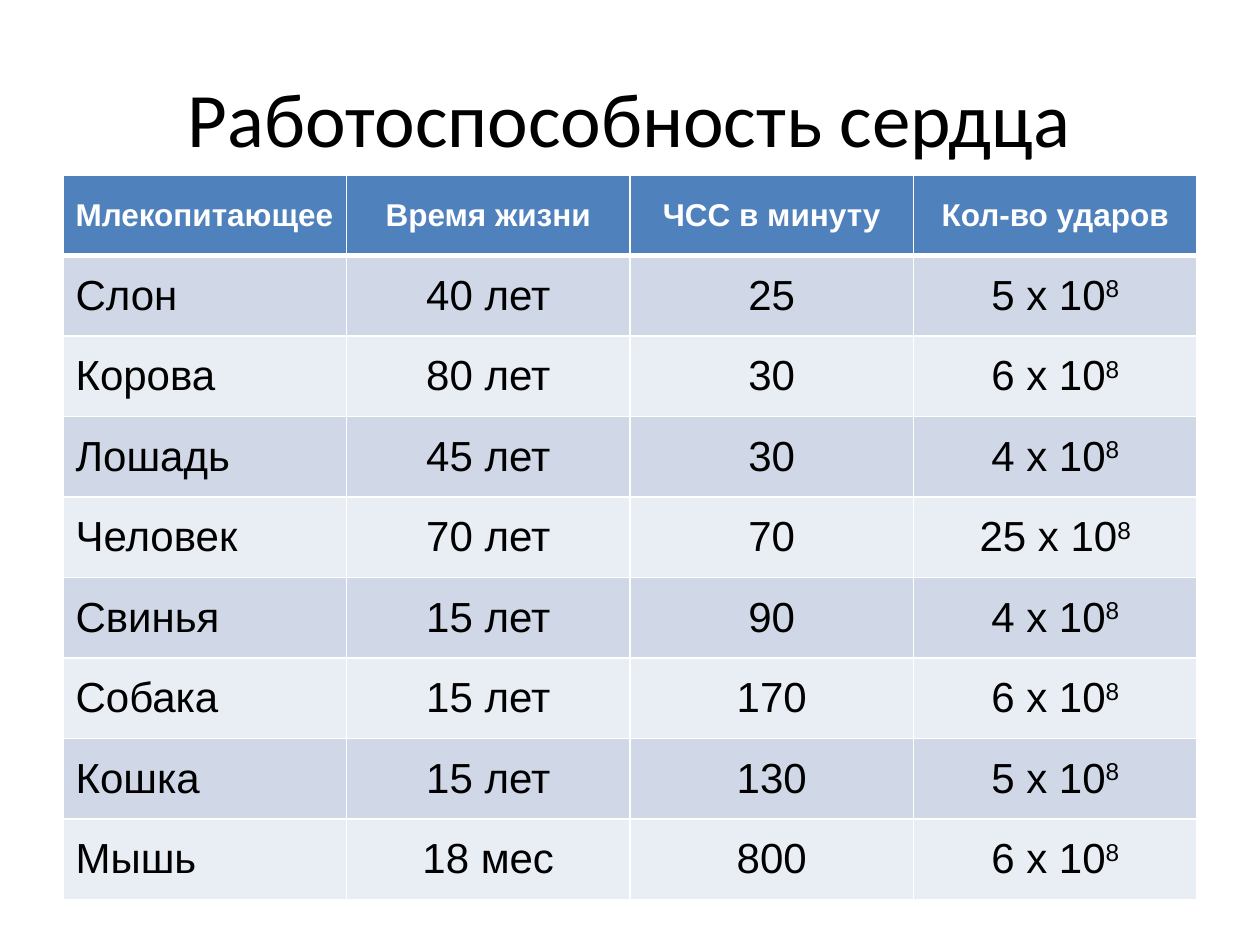
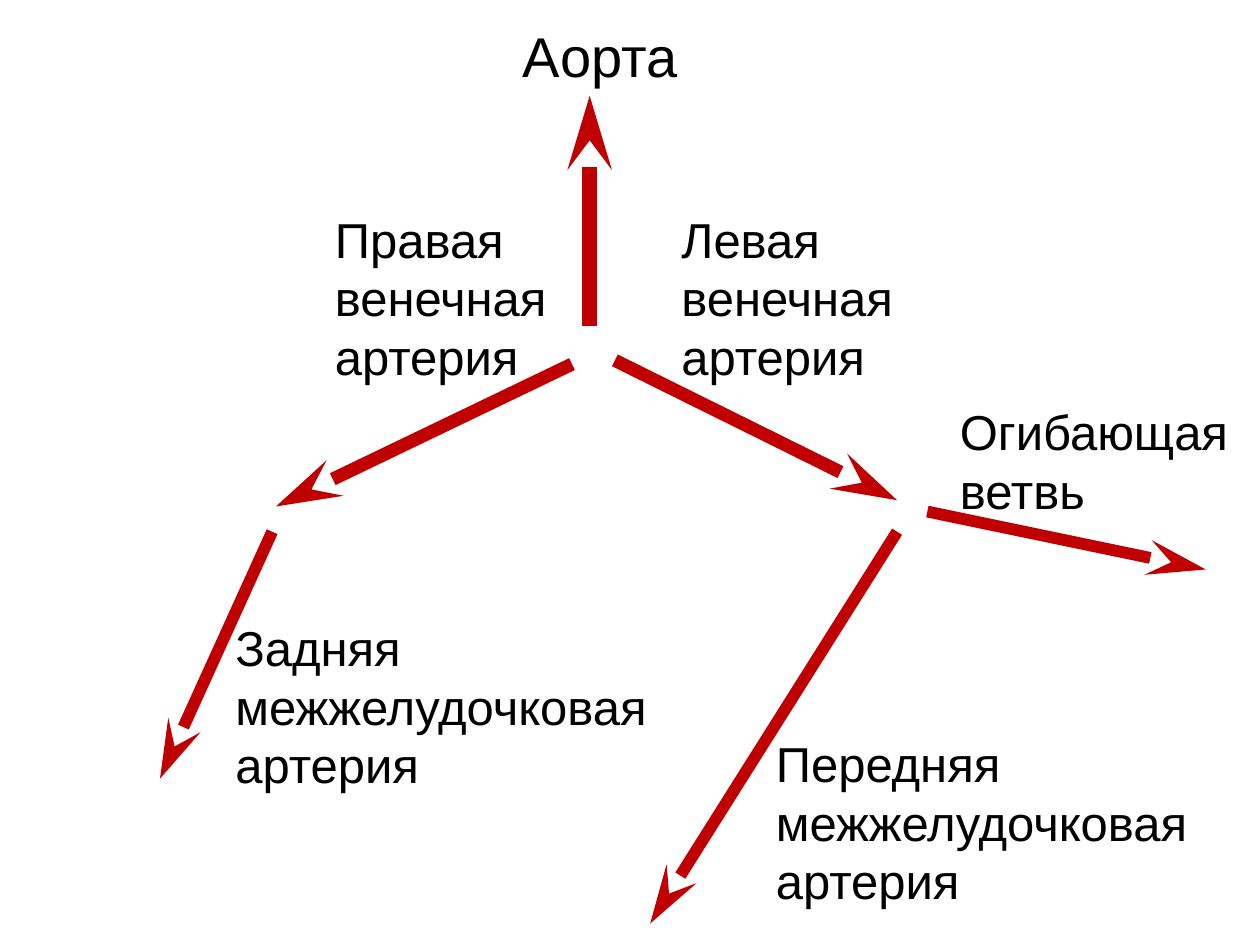
from pptx import Presentation
from pptx.dml.color import RGBColor
from pptx.enum.shapes import MSO_CONNECTOR
from pptx.enum.text import MSO_ANCHOR, PP_ALIGN
from pptx.oxml.ns import qn
from pptx.util import Inches, Pt
from lxml.etree import SubElement, Element

WHITE = RGBColor(0xFF, 0xFF, 0xFF)
BLACK = RGBColor(0, 0, 0)
BLUE = RGBColor(0x4F, 0x81, 0xBD)
DARK = RGBColor(0xD0, 0xD8, 0xE8)
PALE = RGBColor(0xE9, 0xED, 0xF4)
RED = RGBColor(0xC0, 0, 0)

HEADS = ["Млекопитающее", "Время жизни", "ЧСС в минуту", "Кол-во ударов"]
BEASTS = [
    ("Слон", "40 лет", 25, 5),
    ("Корова", "80 лет", 30, 6),
    ("Лошадь", "45 лет", 30, 4),
    ("Человек", "70 лет", 70, 25),
    ("Свинья", "15 лет", 90, 4),
    ("Собака", "15 лет", 170, 6),
    ("Кошка", "15 лет", 130, 5),
    ("Мышь", "18 мес", 800, 6),
]
ARROWS = [
    (4.68, 2.59, 4.68, 0.76, 8.5),
    (4.88, 2.86, 7.12, 3.97, 7.5),
    (4.54, 2.89, 2.19, 4.02, 7.5),
    (2.16, 4.22, 1.27, 6.18, 6.75),
    (7.12, 4.22, 5.16, 7.33, 6.75),
    (7.36, 4.06, 9.57, 4.52, 6.75),
]
LABELS = [
    ("Аорта", 4.05, 0.12, 1.65, 0.64, 32),
    ("Передняя межжелудочковая артерия", 6.06, 5.77, 4.06, 1.51, 28),
    ("Задняя межжелудочковая артерия", 1.77, 4.85, 4.06, 1.51, 28),
    ("Правая венечная артерия", 2.56, 1.61, 2.19, 1.51, 28),
    ("Левая венечная артерия", 5.31, 1.61, 2.19, 1.51, 28),
    ("Огибающая ветвь", 7.52, 3.14, 2.49, 1.04, 28),
]


def style(para, size, color=BLACK, bold=False, face="Arial"):
    for run in para.runs:
        font = run.font
        font.name, font.size, font.bold = face, Pt(size), bold
        font.color.rgb = color


def add_title(slide, text):
    title = slide.shapes.title
    title.left, title.top = Inches(0.5), Inches(0.3)
    title.width, title.height = Inches(9), Inches(1.25)
    frame = title.text_frame
    frame.text = text
    frame.vertical_anchor = MSO_ANCHOR.MIDDLE
    para = frame.paragraphs[0]
    para.alignment = PP_ALIGN.CENTER
    style(para, 44, face="Calibri")


def set_edges(cell, top, base):
    props = cell._tc.get_or_add_tcPr()
    sides = [("L", 1), ("R", 1), ("T", top), ("B", base)]
    for spot, (side, width) in enumerate(sides):
        line = Element(qn("a:ln" + side), w=str(Pt(width)))
        fill = SubElement(line, qn("a:solidFill"))
        SubElement(fill, qn("a:srgbClr"), val=str(WHITE))
        props.insert(spot, line)


def fill_cell(cell, text, row, col):
    head = row == 0
    cell.fill.solid()
    cell.fill.fore_color.rgb = BLUE if head else DARK if row % 2 else PALE
    set_edges(cell, 3 if row == 1 else 1, 3 if head else 1)
    cell.vertical_anchor = MSO_ANCHOR.MIDDLE
    para = cell.text_frame.paragraphs[0]
    para.text = text
    para.alignment = PP_ALIGN.CENTER if col else PP_ALIGN.LEFT
    if col == 3 and not head:
        power = para.add_run()
        power.text = "8"
        power._r.get_or_add_rPr().set("baseline", "30000")
    style(para, 18 if head else 24, WHITE if head else BLACK, head)


def add_grid(slide):
    rows = [HEADS]
    for name, life, rate, beats in BEASTS:
        rows.append((name, life, str(rate), f"{beats} х 10"))
    frame = slide.shapes.add_table(len(rows), len(HEADS), Inches(0.5),
                                   Inches(1.39), Inches(9), Inches(5.75))
    for row, texts in enumerate(rows):
        for col, text in enumerate(texts):
            fill_cell(frame.table.cell(row, col), text, row, col)


def add_arrow(slide, x1, y1, x2, y2, width):
    arrow = slide.shapes.add_connector(MSO_CONNECTOR.STRAIGHT, Inches(x1),
                                       Inches(y1), Inches(x2), Inches(y2))
    arrow.line.color.rgb = RED
    arrow.line.width = Pt(width)
    SubElement(arrow.line._get_or_add_ln(), qn("a:tailEnd"),
               type="stealth", w="med", len="lg")
    SubElement(arrow._element.spPr, qn("a:effectLst"))


def add_label(slide, text, left, top, width, height, size):
    box = slide.shapes.add_textbox(Inches(left), Inches(top),
                                   Inches(width), Inches(height))
    frame = box.text_frame
    frame.word_wrap = True
    frame.text = text
    style(frame.paragraphs[0], size)


def main():
    deck = Presentation()
    deck.slide_width, deck.slide_height = Inches(10), Inches(7.5)

    heart = deck.slides.add_slide(deck.slide_layouts[5])
    add_title(heart, "Работоспособность сердца")
    add_grid(heart)

    tree = deck.slides.add_slide(deck.slide_layouts[6])
    for arrow in ARROWS:
        add_arrow(tree, *arrow)
    for label in LABELS:
        add_label(tree, *label)

    deck.save("out.pptx")


if __name__ == "__main__":
    main()
